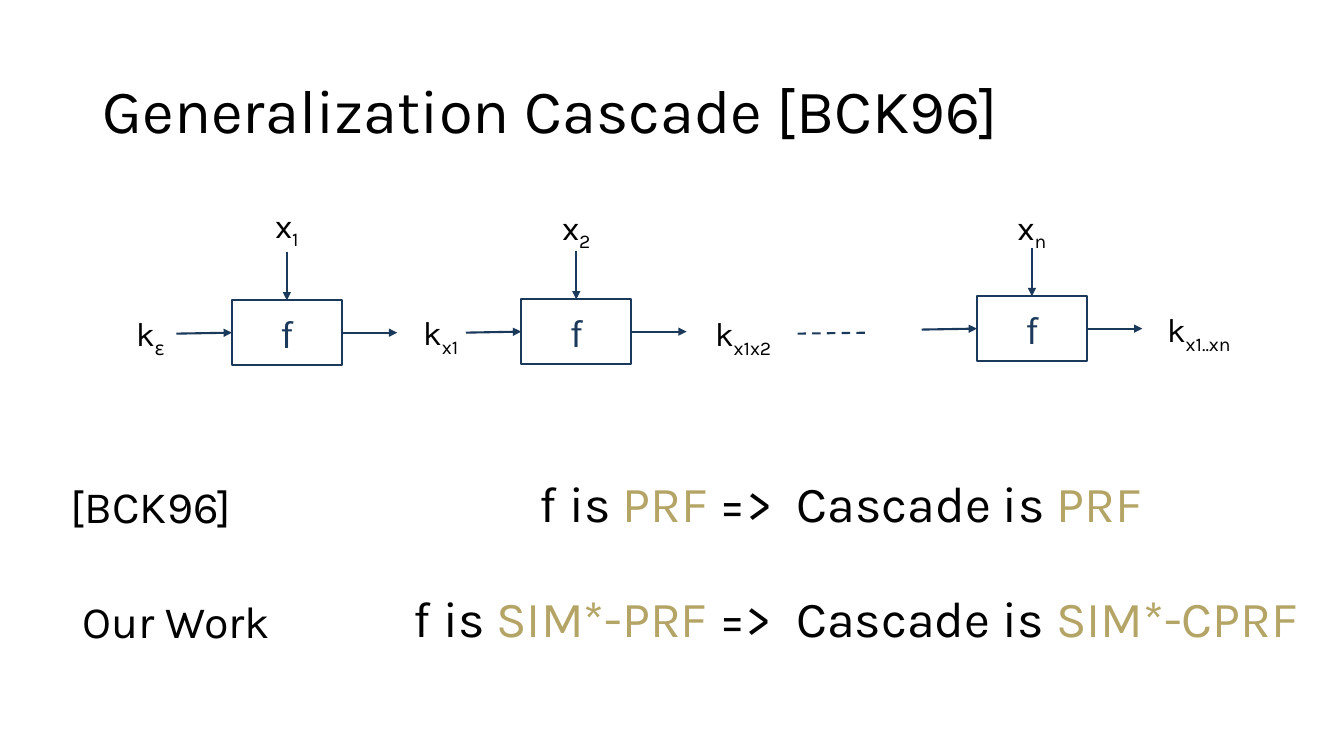
from pptx import Presentation
from pptx.dml.color import RGBColor
from pptx.enum.dml import MSO_LINE
from pptx.enum.shapes import MSO_CONNECTOR, MSO_SHAPE
from pptx.enum.text import MSO_ANCHOR, MSO_AUTO_SIZE, PP_ALIGN
from pptx.oxml.ns import qn
from pptx.util import Inches, Pt
from lxml import etree

BLACK = RGBColor(0x00, 0x00, 0x00)
NAVY = RGBColor(0x1A, 0x39, 0x5B)
GOLD = RGBColor(0xB4, 0xA4, 0x65)
FONT = "Karla"
LEFT, CENTER = PP_ALIGN.LEFT, PP_ALIGN.CENTER
MIDDLE = MSO_ANCHOR.MIDDLE
TOP_SIDE, LEFT_SIDE, RIGHT_SIDE = 0, 1, 3

TITLE = "Generalization Cascade [BCK96]"
# box left, box top, input index, input label top
STAGES = [(2.30, 2.98, "1", 1.98), (5.17, 2.97, "2", 2.00), (9.69, 2.94, "n", 2.00)]
# key index, label left, label top
KEYS = [("ε", 0.96, 3.06), ("x1", 3.84, 3.05), ("x1x2", 6.84, 3.06), ("x1..xn", 11.36, 3.02)]
# text, left, top, alignment
ROW_NAMES = [("[BCK96]", 0.60, 4.70, LEFT), ("Our Work", 0.63, 5.84, CENTER)]
# left, top, width, (text, colour) spans
CLAIMS = [
    (5.19, 4.63, 6.30, [("f is ", BLACK), ("PRF", GOLD),
                        (" =>  Cascade is ", BLACK), ("PRF", GOLD)]),
    (3.06, 5.78, 10.86, [("f is ", BLACK), ("SIM*-PRF ", GOLD),
                         ("=>  Cascade is ", BLACK), ("SIM*-CPRF", GOLD)]),
]
BOX_WIDTH, BOX_HEIGHT = 1.09, 0.64
SIDE_ARROW, TOP_ARROW = 0.55, 0.48
INPUT_WIDTH, KEY_WIDTH, LABEL_HEIGHT = 0.75, 1.06, 0.50


def style(span, size, color):
    span.font.name = FONT
    span.font.size = Pt(size)
    span.font.color.rgb = color


def add_text(slide, left, top, width, height, spans, size, align=CENTER):
    box = slide.shapes.add_textbox(Inches(left), Inches(top), Inches(width), Inches(height))
    box.text_frame.word_wrap = True
    box.text_frame.auto_size = MSO_AUTO_SIZE.SHAPE_TO_FIT_TEXT
    para = box.text_frame.paragraphs[0]
    para.alignment = align
    for text, color in spans:
        span = para.add_run()
        span.text = text
        style(span, size, color)
    return para


def add_indexed(slide, left, top, width, letter, index):
    """Add a variable name with its index as a subscript."""
    para = add_text(slide, left, top, width, LABEL_HEIGHT, [(letter, BLACK), (index, BLACK)], 24)
    para.runs[1].font._element.set("baseline", "-25000")


def add_line(slide, start, end, arrow=True):
    line = slide.shapes.add_connector(MSO_CONNECTOR.STRAIGHT, *map(Inches, start + end))
    line.line.color.rgb = NAVY
    line.line.width = Pt(1.5)
    if arrow:
        etree.SubElement(line.line._get_or_add_ln(), qn("a:tailEnd"), type="triangle")
    etree.SubElement(line._element.spPr, qn("a:effectLst"))
    return line


def add_stage(slide, left, top):
    """Add one f box with its two incoming arrows and its outgoing arrow."""
    box = slide.shapes.add_shape(MSO_SHAPE.RECTANGLE, Inches(left), Inches(top),
                                 Inches(BOX_WIDTH), Inches(BOX_HEIGHT))
    box.shadow.inherit = False
    box.fill.background()
    box.line.color.rgb = NAVY
    box.line.width = Pt(1.5)
    frame = box.text_frame
    frame.text = "f"
    frame.vertical_anchor = MIDDLE
    frame.paragraphs[0].alignment = CENTER
    style(frame.paragraphs[0].runs[0], 28, NAVY)

    right, center, middle = left + BOX_WIDTH, left + BOX_WIDTH / 2, top + BOX_HEIGHT / 2
    key_in = add_line(slide, (left - SIDE_ARROW, middle + 0.01), (left, middle))
    key_in.end_connect(box, LEFT_SIDE)
    value_in = add_line(slide, (center, top - TOP_ARROW), (center, top))
    value_in.end_connect(box, TOP_SIDE)
    key_out = add_line(slide, (right, middle), (right + SIDE_ARROW, middle))
    key_out.begin_connect(box, RIGHT_SIDE)


def main():
    deck = Presentation()
    deck.slide_width, deck.slide_height = Inches(13.33), Inches(7.5)
    slide = deck.slides.add_slide(deck.slide_layouts[5])

    title = slide.shapes.title
    title.left, title.top = Inches(0.92), Inches(0.4)
    title.width, title.height = Inches(11.5), Inches(1.45)
    title.text_frame.text = TITLE
    title.text_frame.vertical_anchor = MIDDLE
    para = title.text_frame.paragraphs[0]
    para.alignment = LEFT
    para.line_spacing = 0.9
    style(para.runs[0], 44, BLACK)

    for left, top, index, label_top in STAGES:
        add_stage(slide, left, top)
        label_left = left + (BOX_WIDTH - INPUT_WIDTH) / 2
        add_indexed(slide, label_left, label_top, INPUT_WIDTH, "x", index)
    for index, left, top in KEYS:
        add_indexed(slide, left, top, KEY_WIDTH, "k", index)
    omitted = add_line(slide, (7.91, 3.31), (8.64, 3.30), arrow=False)
    omitted.line.dash_style = MSO_LINE.DASH

    for text, left, top, align in ROW_NAMES:
        add_text(slide, left, top, 2.24, 0.64, [(text, BLACK)], 32, align)
    for left, top, width, spans in CLAIMS:
        add_text(slide, left, top, width, 0.71, spans, 36)

    deck.save("out.pptx")


if __name__ == "__main__":
    main()
